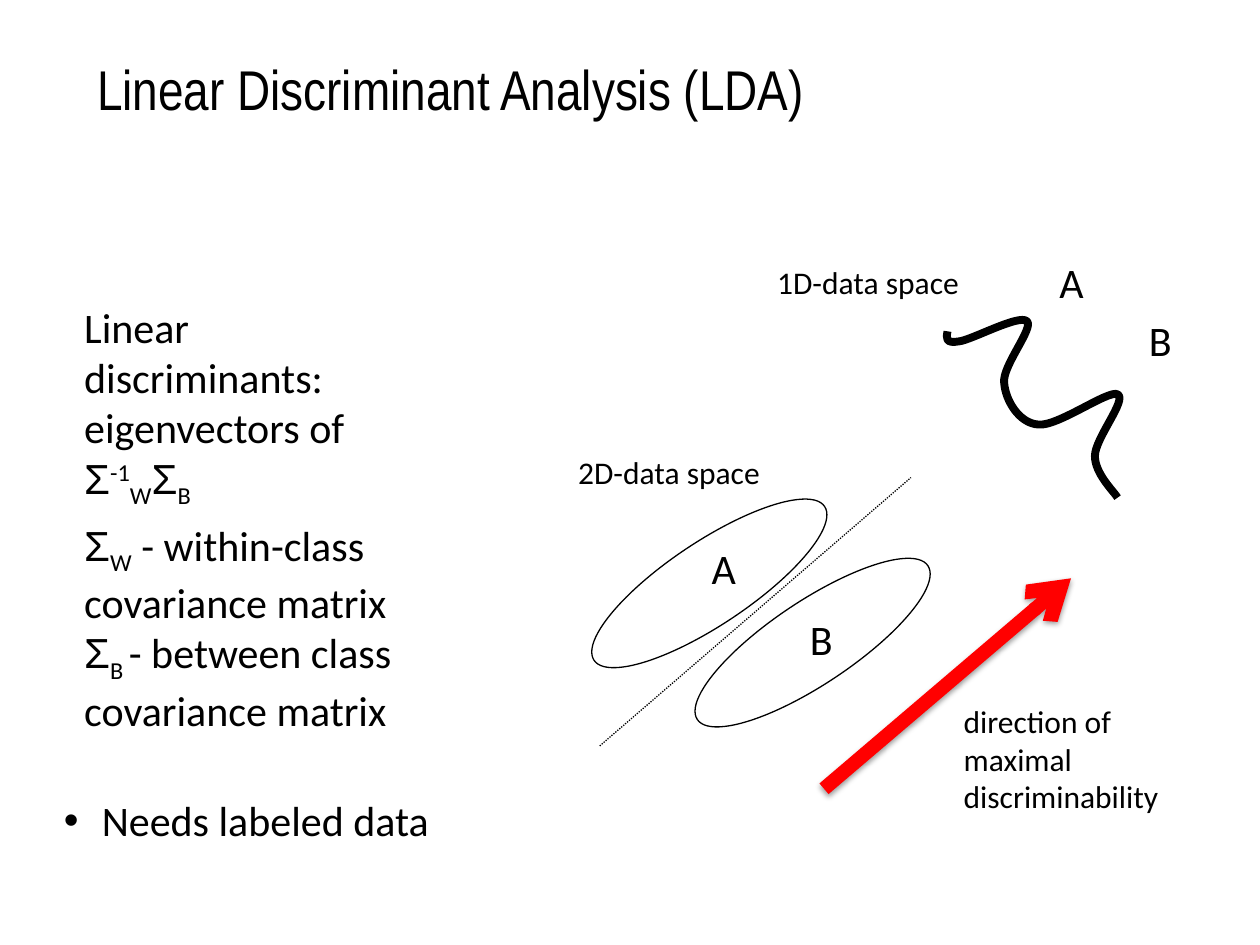
from lxml import etree
from pptx import Presentation
from pptx.dml.color import RGBColor
from pptx.enum.dml import MSO_LINE
from pptx.enum.shapes import MSO_CONNECTOR, MSO_SHAPE
from pptx.enum.text import MSO_ANCHOR, MSO_AUTO_SIZE, PP_ALIGN
from pptx.oxml.ns import qn
from pptx.util import Inches, Pt

STRAIGHT = MSO_CONNECTOR.STRAIGHT
DOTTED = MSO_LINE.ROUND_DOT
ELLIPSE = MSO_SHAPE.OVAL
MIDDLE = MSO_ANCHOR.MIDDLE
LEFT = PP_ALIGN.LEFT
GROW = MSO_AUTO_SIZE.SHAPE_TO_FIT_TEXT
TITLE_ONLY = 5

COLORS = {"ink": "000000", "arrow": "FF0000"}
SIGMA = ("Σ", "Arial", 0)
TILT = 326.3
CURVE_START = (0.02, 0.14)
CURVE_BENDS = [
    [(0.01, 0.19), (0, 0.24), (0.11, 0.22)],
    [(0.21, 0.21), (0.59, 0), (0.65, 0.06)],
    [(0.71, 0.11), (0.45, 0.42), (0.47, 0.55)],
    [(0.48, 0.69), (0.59, 0.87), (0.74, 0.88)],
    [(0.89, 0.9), (1.3, 0.6), (1.37, 0.64)],
    [(1.45, 0.68), (1.19, 0.99), (1.19, 1.13)],
    [(1.19, 1.27), (1.34, 1.41), (1.37, 1.46)],
]


def color(name):
    """Return the named colour."""
    return RGBColor.from_string(COLORS[name])


def child(parent, tag, **attributes):
    """Append a DrawingML element to its parent."""
    return etree.SubElement(parent, qn(tag), attributes)


def write(frame, paragraphs, size=24, font="Calibri"):
    """Fill a frame with paragraphs of strings or (text, font, baseline) runs."""
    for index, runs in enumerate(paragraphs):
        paragraph = frame.add_paragraph() if index else frame.paragraphs[0]
        paragraph.alignment = LEFT
        for item in runs:
            text, face, baseline = (item, font, 0) if isinstance(item, str) else item
            run = paragraph.add_run()
            run.text = text
            run.font.name = face
            run.font.size = Pt(size)
            run.font.color.rgb = color("ink")
            if baseline:
                run.font._element.set("baseline", str(baseline * 1000))


def add_text(shapes, box, paragraphs, size=24, wrap=True):
    """Add a text box that grows with its text."""
    text_box = shapes.add_textbox(*map(Inches, box))
    frame = text_box.text_frame
    frame.word_wrap = wrap
    frame.auto_size = GROW
    write(frame, paragraphs, size=size)
    return text_box


def add_line(shapes, start, end, width, name="ink"):
    """Add a straight line and return it with its empty effect list."""
    line = shapes.add_connector(STRAIGHT, *map(Inches, start + end))
    line.line.color.rgb = color(name)
    line.line.width = Pt(width)
    effects = child(line._element.spPr, "a:effectLst")
    return line, effects


def add_title(slide, box):
    """Place and format the slide title."""
    title = slide.shapes.title
    title.left, title.top, title.width, title.height = map(Inches, box)
    title.text_frame.vertical_anchor = MIDDLE
    write(title.text_frame, [["Linear Discriminant Analysis (LDA)"]], size=32, font="Arial Narrow")


def add_definitions(slide, left, top):
    """Add the column that explains the discriminants."""
    within, between = ("W", "Calibri", -25), ("B", "Calibri", -25)
    add_text(slide.shapes, (left, top, 3, 1.31), [
        ["Linear discriminants: eigenvectors of"],
        [SIGMA, ("-1", "Calibri", 30), within, SIGMA, between],
    ])
    add_text(slide.shapes, (left, top + 1.73, 3.6, 1.72), [
        [SIGMA, within, " - within-class covariance matrix"],
        [SIGMA, ("B ", "Calibri", -25), "- between class covariance matrix"],
    ])
    bullet = add_text(slide.shapes, (left - 0.16, top + 3.92, 3.76, 0.5), [["Needs labeled data"]])
    properties = bullet.text_frame.paragraphs[0]._p.get_or_add_pPr()
    properties.set("marL", str(Inches(0.3)))
    properties.set("indent", str(Inches(-0.3)))
    child(properties, "a:buFont", typeface="Arial")
    child(properties, "a:buChar", char="•")


def add_direction(slide, left, top):
    """Add the arrow of maximal discriminability and its caption."""
    shapes = slide.shapes.add_group_shape().shapes
    add_text(shapes, (left + 1.01, top + 0.93, 2.21, 1.01),
             [["direction of maximal discriminability"]], size=18)
    arrow, effects = add_line(shapes, (left, top + 1.67), (left + 1.96, top), 8, "arrow")
    child(arrow._element.spPr.find(qn("a:ln")), "a:tailEnd", type="arrow")
    shadow = child(effects, "a:outerShdw", blurRad=str(Pt(3.1)), dist=str(Pt(1.6)),
                   dir="5400000", rotWithShape="0")
    child(child(shadow, "a:srgbClr", val=COLORS["ink"]), "a:alpha", val="38000")


def add_labels(shapes, space, space_at, a_at, b_at):
    """Name a data space and its two classes."""
    add_text(shapes, (*a_at, 0.4, 0.5), [["A"]], wrap=False)
    add_text(shapes, (*b_at, 0.39, 0.5), [["B"]], wrap=False)
    add_text(shapes, (*space_at, 1.66, 0.4), [[space]], size=18, wrap=False)


def add_plane(slide, left, top):
    """Add the two classes in the plane and the line between them."""
    shapes = slide.shapes.add_group_shape().shapes
    for x, y in ((0.04, 0.75), (0.86, 1.22)):
        ellipse = shapes.add_shape(ELLIPSE, *map(Inches, (left + x, top + y, 2.2, 0.66)))
        ellipse.rotation = TILT
        ellipse.shadow.inherit = False
        ellipse.fill.background()
        ellipse.line.color.rgb = color("ink")
        ellipse.line.width = Pt(0.75)
    divider, _ = add_line(shapes, (left + 0.27, top + 2.37), (left + 2.74, top + 0.24), 0.75)
    divider.line.dash_style = DOTTED
    add_labels(shapes, "2D-data space", (left, top),
               (left + 1.06, top + 0.71), (left + 1.84, top + 1.27))


def add_density(slide, left, top):
    """Add the curve of the two classes along one dimension."""
    shapes = slide.shapes.add_group_shape().shapes
    points = [(left + 1.43 + x, top + 0.5 + y)
              for x, y in [CURVE_START] + sum(CURVE_BENDS, [])]
    start, *others = [tuple(map(Inches, point)) for point in points]
    builder = shapes.build_freeform(*start)
    builder.add_line_segments(others, close=False)
    curve = builder.convert_to_shape()
    segments = list(curve._element.iter(qn("a:lnTo")))
    for first in range(0, len(segments), 3):
        outline = segments[first].getparent()
        bend = child(outline, "a:cubicBezTo")
        for segment in segments[first:first + 3]:
            bend.append(segment[0])
            outline.remove(segment)
    curve.shadow.inherit = False
    curve.fill.background()
    curve.line.color.rgb = color("ink")
    curve.line.width = Pt(4.5)
    add_labels(shapes, "1D-data space", (left, top + 0.05),
               (left + 2.24, top), (left + 2.95, top + 0.46))


def main():
    """Build and save the slide."""
    presentation = Presentation()
    presentation.slide_width, presentation.slide_height = Inches(10), Inches(7.5)
    slide = presentation.slides.add_slide(presentation.slide_layouts[TITLE_ONLY])
    add_title(slide, (0.67, 0.17, 9, 1.06))
    add_definitions(slide, 0.57, 2.34)
    add_direction(slide, 6.54, 4.59)
    add_plane(slide, 4.49, 3.55)
    add_density(slide, 6.07, 1.99)
    presentation.save("out.pptx")


if __name__ == "__main__":
    main()
